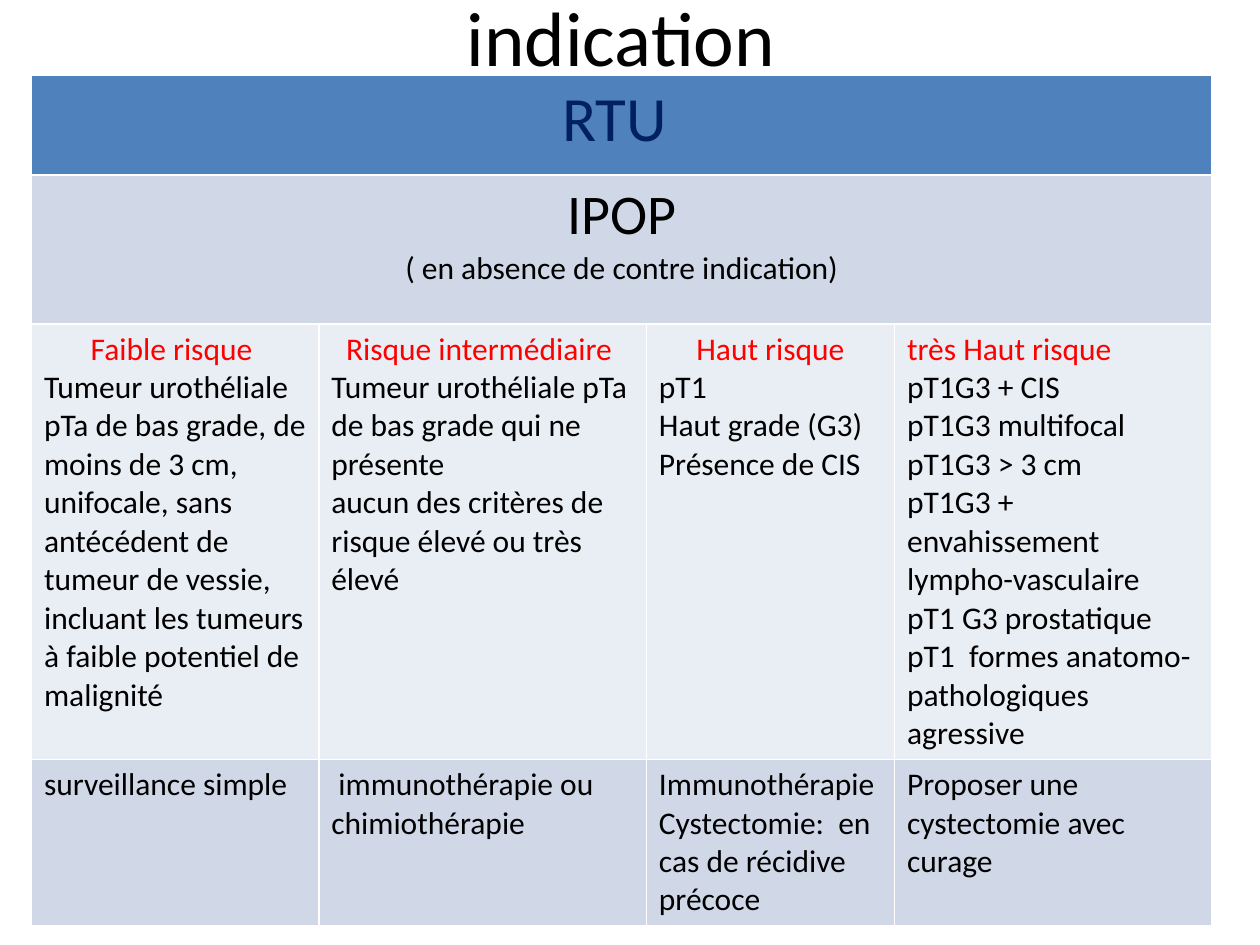
from pptx import Presentation
from pptx.dml.color import RGBColor
from pptx.enum.text import MSO_ANCHOR, PP_ALIGN
from pptx.util import Inches, Pt

CENTER, LEFT = PP_ALIGN.CENTER, PP_ALIGN.LEFT
MIDDLE = MSO_ANCHOR.MIDDLE
TITLE_ONLY = 5

THEME = {
    "font": "Calibri",
    "title": 44, "surgery": 36, "instillation": 32, "body": 18,
    "ink": "000000", "navy": "002060", "risk": "FF0000",
    "header": "4F81BD", "band": "D0D8E8", "light": "E9EDF4",
}

COLS = [2.28, 2.6, 1.97, 2.52]
ROWS = [0.79, 1.18, 3.45, 1.32]
ROW_FILLS = ["header", "band", "light", "band"]

# Each group: risk level, its alignment, criteria, treatment
GROUPS = [
    ("Faible risque ", CENTER,
     ["Tumeur urothéliale pTa de bas grade, de moins de 3 cm,",
      "unifocale, sans antécédent de tumeur de vessie,",
      "incluant les tumeurs à faible potentiel de malignité"],
     ["surveillance simple"]),
    ("Risque intermédiaire ", CENTER,
     ["Tumeur urothéliale pTa de bas grade qui ne présente",
      "aucun des critères de risque élevé ou très élevé"],
     [" immunothérapie ou chimiothérapie"]),
    ("Haut risque", CENTER,
     ["pT1", "Haut grade (G3)", "Présence de CIS"],
     ["Immunothérapie", "Cystectomie:  en cas de récidive précoce"]),
    ("très Haut risque", LEFT,
     ["pT1G3 + CIS", "pT1G3 multifocal", "pT1G3 > 3 cm",
      "pT1G3 + envahissement lympho-vasculaire", "pT1 G3 prostatique",
      "pT1  formes anatomo-pathologiques agressive"],
     ["Proposer une cystectomie avec curage"]),
]


def write(tf, lines):
    """Fill tf with one paragraph per (text, size, colour, alignment)."""
    for i, (text, size, color, align) in enumerate(lines):
        p = tf.paragraphs[0] if i == 0 else tf.add_paragraph()
        p.text = text
        p.alignment = align
        p.font.name = THEME["font"]
        p.font.size = Pt(THEME[size])
        p.font.bold = False
        p.font.color.rgb = RGBColor.from_string(THEME[color])


def body(texts):
    return [(text, "body", "ink", LEFT) for text in texts]


prs = Presentation()
prs.slide_width, prs.slide_height = Inches(10), Inches(7.5)
s = prs.slides.add_slide(prs.slide_layouts[TITLE_ONLY])

title = s.shapes.title
title.left, title.top = Inches(0.43), Inches(-0.34)
title.width, title.height = Inches(9), Inches(1.25)
title.text_frame.vertical_anchor = MIDDLE
write(title.text_frame, [("indication", "title", "ink", CENTER)])

table = s.shapes.add_table(len(ROWS), len(COLS), Inches(0.25), Inches(0.6),
                           Inches(sum(COLS)), Inches(sum(ROWS))).table
for column, width in zip(table.columns, COLS):
    column.width = Inches(width)
for row, height, fill in zip(table.rows, ROWS, ROW_FILLS):
    row.height = Inches(height)
    for cell in row.cells:
        cell.fill.solid()
        cell.fill.fore_color.rgb = RGBColor.from_string(THEME[fill])

for r in (0, 1):
    table.cell(r, 0).merge(table.cell(r, len(COLS) - 1))
write(table.cell(0, 0).text_frame, [("RTU ", "surgery", "navy", CENTER)])
write(table.cell(1, 0).text_frame, [
    ("IPOP", "instillation", "ink", CENTER),
    ("( en absence de contre indication)", "body", "ink", CENTER),
])

for c, (risk, align, criteria, treatment) in enumerate(GROUPS):
    write(table.cell(2, c).text_frame,
          [(risk, "body", "risk", align)] + body(criteria))
    write(table.cell(3, c).text_frame, body(treatment))

prs.save("out.pptx")
